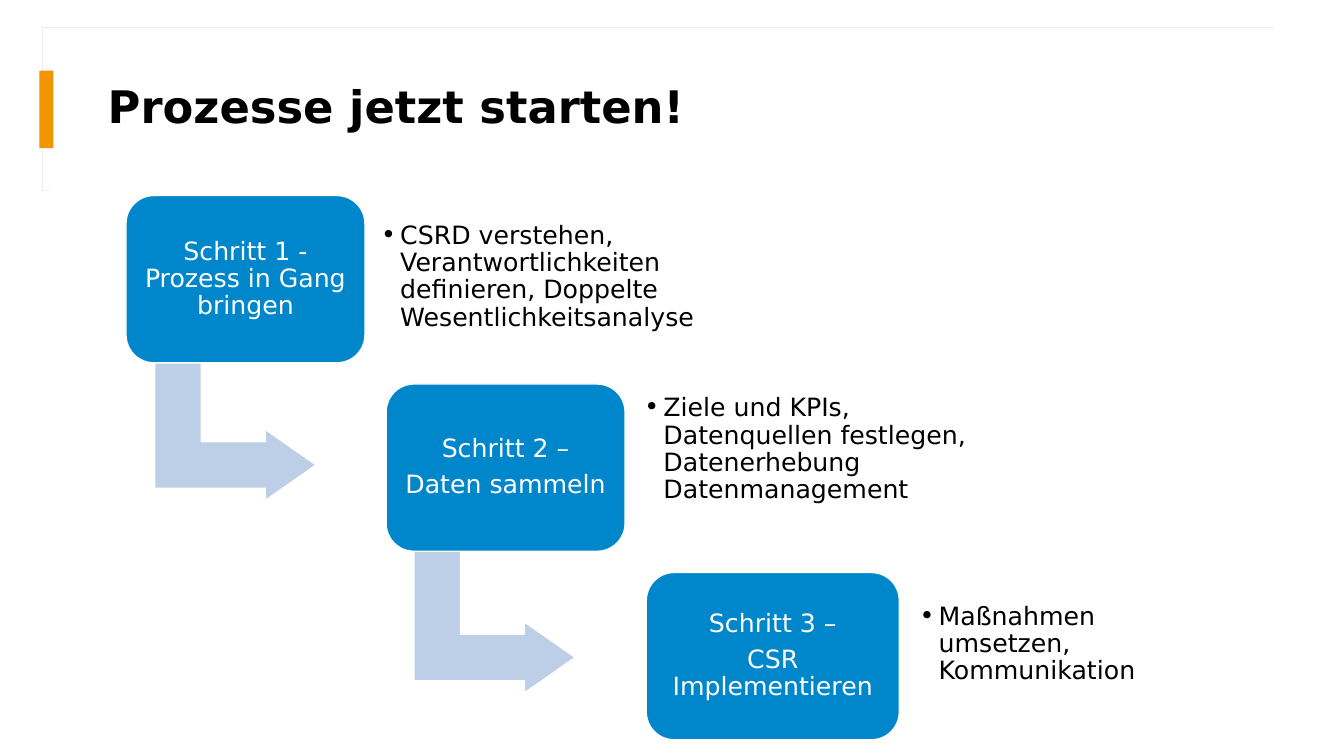
import pptx
import pptx.dml.color
import pptx.enum.shapes
import pptx.enum.text
import pptx.oxml
import pptx.oxml.ns
import pptx.util

PX = 9144  # EMU per px, 100 px to the inch
FONT = "DejaVu Sans"
COLORS = {
    "white": "FFFFFF",
    "black": "000000",
    "frame": "EBEEF2",
    "accent": "F29400",
    "step": "0086CB",
    "arrow": "BDCEE7",
}
SHAPES = pptx.enum.shapes.MSO_SHAPE
ALIGN = pptx.enum.text.PP_ALIGN

STEP_PITCH = (258, 187)
ARROW_PITCH = (257, 191)
# step width, step paragraphs with space after in pt, note box, note text
STEPS = [
    (237, [("Schritt 1 - Prozess in Gang bringen", 6.3)], (371, 208, 427, 134),
     "CSRD verstehen, Verantwortlichkeiten definieren, Doppelte Wesentlichkeitsanalyse"),
    (237, [("Schritt 2 –", 6.3), ("Daten sammeln", 6.3)], (632, 379, 371, 134),
     "Ziele und KPIs, Datenquellen festlegen, Datenerhebung Datenmanagement"),
    (251, [("Schritt 3 –", 6.3), ("CSR", 0), ("Implementieren", 0)], (905, 572, 265, 134),
     "Maßnahmen umsetzen, Kommunikation"),
]


def rgb(name):
    return pptx.dml.color.RGBColor.from_string(COLORS[name])


def emu(box):
    return [pptx.util.Emu(length * PX) for length in box]


def add_shape(page, kind, box, fill, line=None, line_width=1):
    shape = page.shapes.add_shape(kind, *emu(box))
    shape.shadow.inherit = False
    shape.fill.solid()
    shape.fill.fore_color.rgb = rgb(fill)
    if line:
        shape.line.color.rgb = rgb(line)
        shape.line.width = pptx.util.Pt(line_width)
    else:
        shape.line.fill.background()
    return shape


def prepare_frame(frame, inset):
    """Wrap and centre the text vertically, with equal insets in px."""
    frame.word_wrap = True
    frame.vertical_anchor = pptx.enum.text.MSO_ANCHOR.MIDDLE
    frame.margin_left = frame.margin_right = pptx.util.Emu(inset * PX)
    frame.margin_top = frame.margin_bottom = pptx.util.Emu(inset * PX)


def write(para, text, color, size=18, bold=False, align=ALIGN.LEFT, after=0):
    para.alignment = align
    para.line_spacing = 0.9
    para.space_after = pptx.util.Pt(after)
    span = para.add_run()
    span.text = text
    span.font.name = FONT
    span.font.size = pptx.util.Pt(size)
    span.font.bold = bold
    span.font.color.rgb = rgb(color)


def add_bullet(para, indent):
    properties = para._p.get_or_add_pPr()
    properties.set("marL", str(indent * PX))
    properties.set("indent", str(-indent * PX))
    namespace = pptx.oxml.ns.nsdecls("a")
    properties.append(pptx.oxml.parse_xml(f'<a:buFont {namespace} typeface="{FONT}"/>'))
    properties.append(pptx.oxml.parse_xml(f'<a:buChar {namespace} char="•"/>'))


def add_header(page, box):
    left, top, width, height = box
    add_shape(page, SHAPES.RECTANGLE, box, "white", "frame", 0.75)
    add_shape(page, SHAPES.RECTANGLE, (left + 7, top + 1, width, height), "white")
    add_shape(page, SHAPES.RECTANGLE, (left - 3, top + 43, 14, 77), "accent")
    title = page.shapes.add_textbox(*emu((left + 55, top + 17, 1112, 129)))
    prepare_frame(title.text_frame, 10)
    write(title.text_frame.paragraphs[0], "Prozesse jetzt starten!", "black", 32, True)


def add_arrow(page, box):
    arrow = add_shape(page, SHAPES.BENT_UP_ARROW, box, "arrow", "white")
    arrow.rotation = 90
    for index, value in enumerate((0.328, 0.25, 0.358)):
        arrow.adjustments[index] = value


def add_step(page, box, paragraphs):
    step = add_shape(page, SHAPES.ROUNDED_RECTANGLE, box, "step", "white")
    frame = step.text_frame
    prepare_frame(frame, 7)
    for index, (text, after) in enumerate(paragraphs):
        para = frame.add_paragraph() if index else frame.paragraphs[0]
        write(para, text, "white", align=ALIGN.CENTER, after=after)


def add_note(page, box, text):
    note = page.shapes.add_textbox(*emu(box))
    prepare_frame(note.text_frame, 7)
    para = note.text_frame.paragraphs[0]
    add_bullet(para, 19)
    write(para, text, "black", after=2.7)


def add_staircase(page, left, top):
    for index, (width, paragraphs, note_box, note) in enumerate(STEPS):
        if index < len(STEPS) - 1:
            arrow_left = left + 38 + index * ARROW_PITCH[0]
            arrow_top = top + 152 + index * ARROW_PITCH[1]
            add_arrow(page, (arrow_left, arrow_top, 141, 160))
        step_left = left + index * STEP_PITCH[0]
        step_top = top + index * STEP_PITCH[1]
        add_step(page, (step_left, step_top, width, 166), paragraphs)
        add_note(page, note_box, note)


def main():
    deck = pptx.Presentation()
    deck.slide_width, deck.slide_height = emu((1333, 750))
    page = deck.slides.add_slide(deck.slide_layouts[6])
    add_header(page, (42, 27, 1221, 162))
    add_staircase(page, 125, 194)
    deck.save("out.pptx")


if __name__ == "__main__":
    main()
